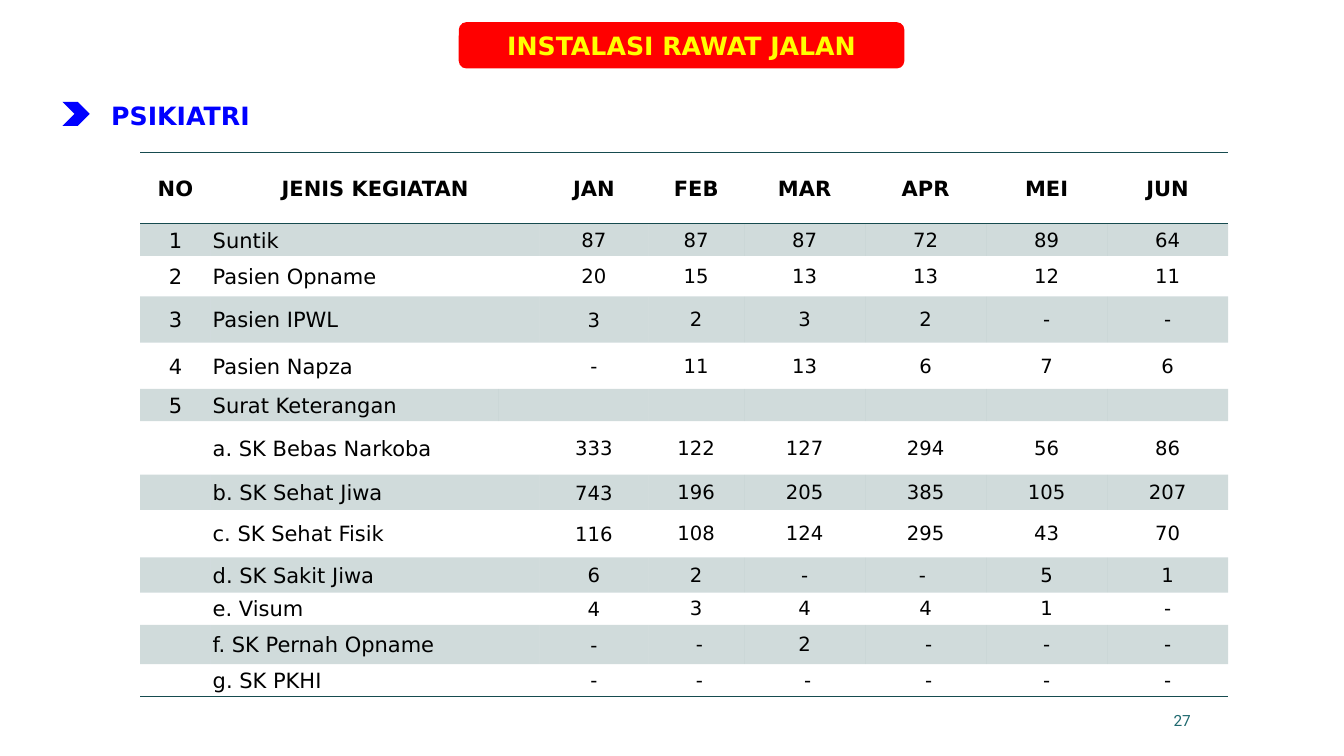
from dataclasses import dataclass

from lxml import etree
from pptx import Presentation
from pptx import util as u
from pptx.dml.color import RGBColor
from pptx.enum import shapes, text
from pptx.oxml import ns


@dataclass(frozen=True)
class Theme:
    font: str = "DejaVu Sans"
    foot: str = "Roboto"
    black: str = "000000"
    red: str = "FF0000"
    yellow: str = "FFFF00"
    blue: str = "0000FF"
    teal: str = "164B4F"
    pale: str = "1F696F"
    title: int = 18
    label: int = 15
    value: int = 14
    page: int = 11


T = Theme()
SHAPE = shapes.MSO_SHAPE
ALIGN = text.PP_ALIGN
PLAIN = "{2D5ABB26-0587-4C30-8999-92F81FD0307C}"  # no style, no grid

HEAD = "NO|JENIS KEGIATAN|JAN|FEB|MAR|APR|MEI|JUN"
# Row height and cells; hard spaces nudge some dashes off centre
ROWS = [
    (0.32, "1|Suntik|87|87|87|72|89|64"),
    (0.4, "2|Pasien Opname|20|15|13|13|12|11"),
    (0.46, "3|Pasien IPWL|3|2|3|2|-|-"),
    (0.46, "4|Pasien Napza|-|11|13|6|7|6"),
    (0.32, "5|Surat Keterangan||||||"),
    (0.53, "|a. SK Bebas Narkoba|333|122|127|294|56|86"),
    (0.35, "|b. SK Sehat Jiwa|743|196|205|385|105|207"),
    (0.47, "|c. SK Sehat Fisik|116|108|124|295|43|70"),
    (0.35, "|d. SK Sakit Jiwa|6|2|-|- |5|1"),
    (0.32, "|e. Visum|4|3|4|4|1|-"),
    (0.39, "|f. SK Pernah Opname|-| -|2| -|-|-"),
    (0.32, "|g. SK PKHI|-| -| -| -|-|-"),
]
COLS = [0.7, 2.85, 0.41, 1.08, 0.95] + [1.2] * 4
SLOTS = [0, 1, 3, 4, 5, 6, 7, 8]  # column 2 belongs to a merged cell


def write(frame, words, size=T.label, color=T.black, bold=False,
          align=ALIGN.CENTER, font=T.font):
    para = frame.paragraphs[0]
    para.alignment = align
    run = para.add_run()
    run.text = words
    run.font.name = font
    run.font.size = u.Pt(size)
    run.font.bold = bold
    run.font.color.rgb = RGBColor.from_string(color)


def add_box(slide, kind, at, color):
    box = slide.shapes.add_shape(kind, *map(u.Inches, at))
    box.shadow.inherit = False
    box.fill.solid()
    box.fill.fore_color.rgb = RGBColor.from_string(color)
    box.line.fill.background()
    return box


def add_text(slide, at, words, wrap=True, **form):
    frame = slide.shapes.add_textbox(*map(u.Inches, at)).text_frame
    frame.word_wrap = wrap
    if wrap:
        frame.vertical_anchor = text.MSO_ANCHOR.MIDDLE
    else:
        frame.auto_size = text.MSO_AUTO_SIZE.SHAPE_TO_FIT_TEXT
    write(frame, words, **form)


def rule(cell, side):
    line = etree.SubElement(cell._tc.get_or_add_tcPr(),
                            ns.qn("a:ln" + side), w=str(u.Pt(1)))
    fill = etree.SubElement(line, ns.qn("a:solidFill"))
    etree.SubElement(fill, ns.qn("a:srgbClr"), val=T.teal)


def tint(cell):
    cell.fill.solid()
    cell.fill.fore_color.rgb = RGBColor.from_string(T.teal)
    color = cell._tc.tcPr.find(".//" + ns.qn("a:srgbClr"))
    etree.SubElement(color, ns.qn("a:alpha"), val="20000")


def pad(cell, gap):
    cell.vertical_anchor = text.MSO_ANCHOR.MIDDLE
    cell.margin_left = cell.margin_right = cell.margin_top = u.Inches(gap)
    cell.margin_bottom = 0


def fill_row(grid, row, words):
    for col, word in zip(SLOTS, words):
        cell = grid.cell(row, col)
        if word:
            write(cell.text_frame, word, bold=row == 0,
                  size=T.value if row and col > 1 else T.label,
                  align=ALIGN.LEFT if row and col == 1 else ALIGN.CENTER)
    # The row without values joins its blank cells instead
    start = 1 if words[2] else 2
    grid.cell(row, start).merge(grid.cell(row, start + 1))
    for col in range(len(COLS)):
        cell = grid.cell(row, col)
        pad(cell, 0.01 if row and col > 3 else 0.02)
        if not cell.text_frame.text:
            etree.SubElement(cell.text_frame.paragraphs[0]._p,
                             ns.qn("a:endParaRPr"), sz=str(T.value * 100))
        if row == 0:
            rule(cell, "T")
        if row in (0, len(ROWS)):
            rule(cell, "B")
        if row % 2:
            tint(cell)


def add_grid(slide):
    rows = [(0.71, HEAD)] + ROWS
    size = [1.39, 1.51, sum(COLS), sum(high for high, _ in rows)]
    grid = slide.shapes.add_table(len(rows), len(COLS),
                                  *map(u.Inches, size)).table
    grid._tbl.tblPr.find(ns.qn("a:tableStyleId")).text = PLAIN
    grid.first_row = grid.horz_banding = False
    for col, wide in zip(grid.columns, COLS):
        col.width = u.Inches(wide)
    for row, (high, words) in enumerate(rows):
        grid.rows[row].height = u.Inches(high)
        fill_row(grid, row, words.split("|"))


def main():
    deck = Presentation()
    deck.slide_width, deck.slide_height = u.Inches(13.33), u.Inches(7.5)
    slide = deck.slides.add_slide(deck.slide_layouts[6])

    # Table of monthly counts
    add_grid(slide)

    # Page number
    add_text(slide, (8.8, 6.95, 3.11, 0.4), "27", size=T.page,
             color=T.pale, align=ALIGN.RIGHT, font=T.foot)

    # Title banner
    banner = add_box(slide, SHAPE.ROUNDED_RECTANGLE,
                     (4.55, 0.22, 4.42, 0.46), T.red)
    banner.text_frame.vertical_anchor = text.MSO_ANCHOR.MIDDLE
    write(banner.text_frame, "INSTALASI RAWAT JALAN", size=T.title,
          color=T.yellow, bold=True)

    # Section heading
    add_box(slide, SHAPE.CHEVRON, (0.62, 1.01, 0.27, 0.24), T.blue)
    add_text(slide, (0.92, 0.95, 1.74, 0.4), "PSIKIATRI", wrap=False,
             size=T.title, color=T.blue, bold=True)

    deck.save("out.pptx")


if __name__ == "__main__":
    main()
